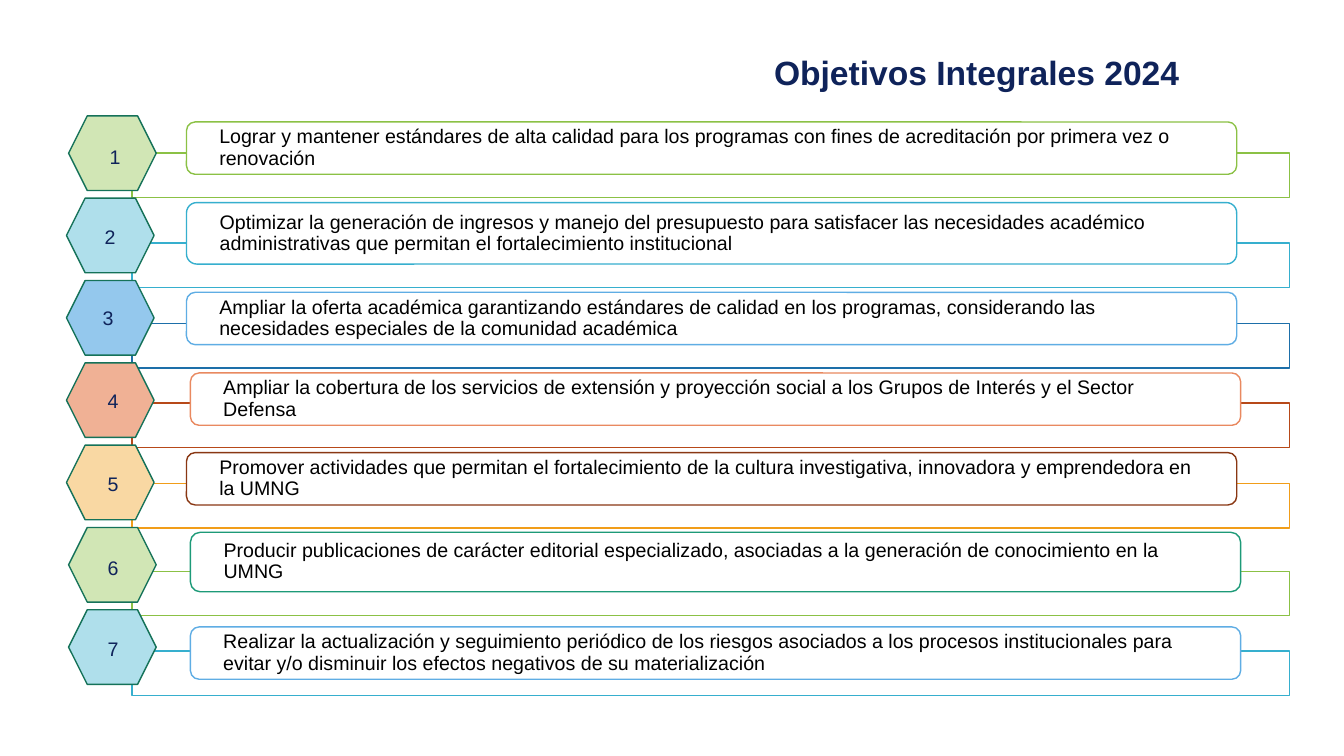
from typing import NamedTuple

from lxml.etree import SubElement
from pptx import Presentation
from pptx.dml.color import RGBColor
from pptx.enum.shapes import MSO_SHAPE as SHAPE
from pptx.enum.text import MSO_ANCHOR as ANCHOR, PP_ALIGN as ALIGN
from pptx.oxml.ns import qn
from pptx.util import Pt


class Goal(NamedTuple):
    text: str
    rail_top: float
    rail_line: str
    card_left: float
    card_top: float
    card_height: float
    card_line: str
    hex_left: float
    hex_fill: str
    number_left: float
    number_top: float


TITLE = "Objetivos Integrales 2024"
GOALS = [
    Goal("Lograr y mantener estándares de alta calidad para los programas con fines de "
         "acreditación por primera vez o renovación",
         109.4, "8BC145", 133.2, 87.1, 37.4, "8BC145", 49, "D1E6B5", 71.3, 100.1),
    Goal("Optimizar la generación de ingresos y manejo del presupuesto para satisfacer las "
         "necesidades académico administrativas que permitan el fortalecimiento institucional",
         173.5, "36AFCE", 133.2, 144.7, 43.9, "36AFCE", 47.5, "AFDFEB", 67.7, 157),
    Goal("Ampliar la oferta académica garantizando estándares de calidad en los programas, "
         "considerando las necesidades especiales de la comunidad académica",
         231.1, "1D6FA9", 133.2, 208.8, 37.4, "5FADE4", 47.5, "94C8ED", 66.2, 215.3),
    Goal("Ampliar la cobertura de los servicios de extensión y proyección social a los "
         "Grupos de Interés y el Sector Defensa",
         288, "B74919", 136, 266.4, 37.4, "E98960", 47.5, "F0B195", 69.8, 274.3),
    Goal("Promover actividades que permitan el fortalecimiento de la cultura investigativa, "
         "innovadora y emprendedora en la UMNG",
         345.6, "F19D19", 133.2, 323.3, 37.4, "893713", 47.5, "F9D8A3", 69.8, 333.4),
    Goal("Producir publicaciones de carácter editorial especializado, asociadas a la "
         "generación de conocimiento en la UMNG",
         408.2, "8BC145", 136, 380.2, 42.5, "1D9A78", 49, "D1E6B5", 69.8, 393.8),
    Goal("Realizar la actualización y seguimiento periódico de los riesgos asociados a los "
         "procesos institucionales para evitar y/o disminuir los efectos negativos de su "
         "materialización",
         465.1, "36AFCE", 136, 447.8, 37.4, "5FADE4", 49, "AFDFEB", 69.8, 451.4),
]
NAVY, BLACK, WHITE, GREEN = "0F235A", "000000", "FFFFFF", "157259"
RAIL_LEFT, RAIL_WIDTH, RAIL_HEIGHT = 94.3, 826.6, 31.7
CARD_WIDTH, CARD_INSET = 750.2, 21.6
HEX_TOP, HEX_STEP, HEX_WIDTH, HEX_HEIGHT = 82.8, 58.8, 62.6, 53.3
NUMBER_SIZE = 24.5


def color(hex_string):
    return RGBColor.from_string(hex_string)


def add_outlined(shapes, kind, box, fill, line):
    sp = shapes.add_shape(kind, *map(Pt, box))
    sp.shadow.inherit = False
    sp.fill.solid()
    sp.fill.fore_color.rgb = color(fill)
    sp.line.color.rgb = color(line)
    sp.line.width = Pt(1)
    return sp


def set_opacity(sp, percent):
    rgb = sp.fill._xPr.find(qn("a:solidFill"))[0]
    SubElement(rgb, qn("a:alpha")).set("val", str(percent * 1000))


def write(tf, text, size, rgb, bold=False):
    tf.text = text
    tf.word_wrap = True
    p = tf.paragraphs[0]
    p.alignment = ALIGN.LEFT
    font = p.runs[0].font
    font.name, font.size, font.bold = "Arial", Pt(size), bold
    font.color.rgb = color(rgb)
    return p


def set_margins(tf, left, right):
    tf.margin_left, tf.margin_right = Pt(left), Pt(right)
    tf.margin_top = tf.margin_bottom = 0
    tf.vertical_anchor = ANCHOR.MIDDLE


def main():
    prs = Presentation()
    prs.slide_width, prs.slide_height = Pt(960), Pt(540)
    slide = prs.slides.add_slide(prs.slide_layouts[5])
    shapes = slide.shapes

    title = shapes.title
    title.left, title.top, title.width, title.height = map(Pt, (540.7, 37.4, 482.4, 28.8))
    set_margins(title.text_frame, 12.2, 31)
    write(title.text_frame, TITLE, 24, NAVY, bold=True)

    for goal in GOALS:
        rail = add_outlined(shapes, SHAPE.RECTANGLE,
                            (RAIL_LEFT, goal.rail_top, RAIL_WIDTH, RAIL_HEIGHT),
                            WHITE, goal.rail_line)
        set_opacity(rail, 90)
        card = add_outlined(shapes, SHAPE.ROUNDED_RECTANGLE,
                            (goal.card_left, goal.card_top, CARD_WIDTH, goal.card_height),
                            WHITE, goal.card_line)
        set_margins(card.text_frame, CARD_INSET, CARD_INSET)
        write(card.text_frame, goal.text, 14, BLACK).line_spacing = 0.9

    for i, goal in enumerate(GOALS):
        add_outlined(shapes, SHAPE.HEXAGON,
                     (goal.hex_left, HEX_TOP + i * HEX_STEP, HEX_WIDTH, HEX_HEIGHT),
                     goal.hex_fill, GREEN)

    for number, goal in enumerate(GOALS, 1):
        label = shapes.add_textbox(Pt(goal.number_left), Pt(goal.number_top),
                                   Pt(NUMBER_SIZE), Pt(NUMBER_SIZE))
        write(label.text_frame, str(number), 14, NAVY)

    prs.save("out.pptx")


if __name__ == "__main__":
    main()
